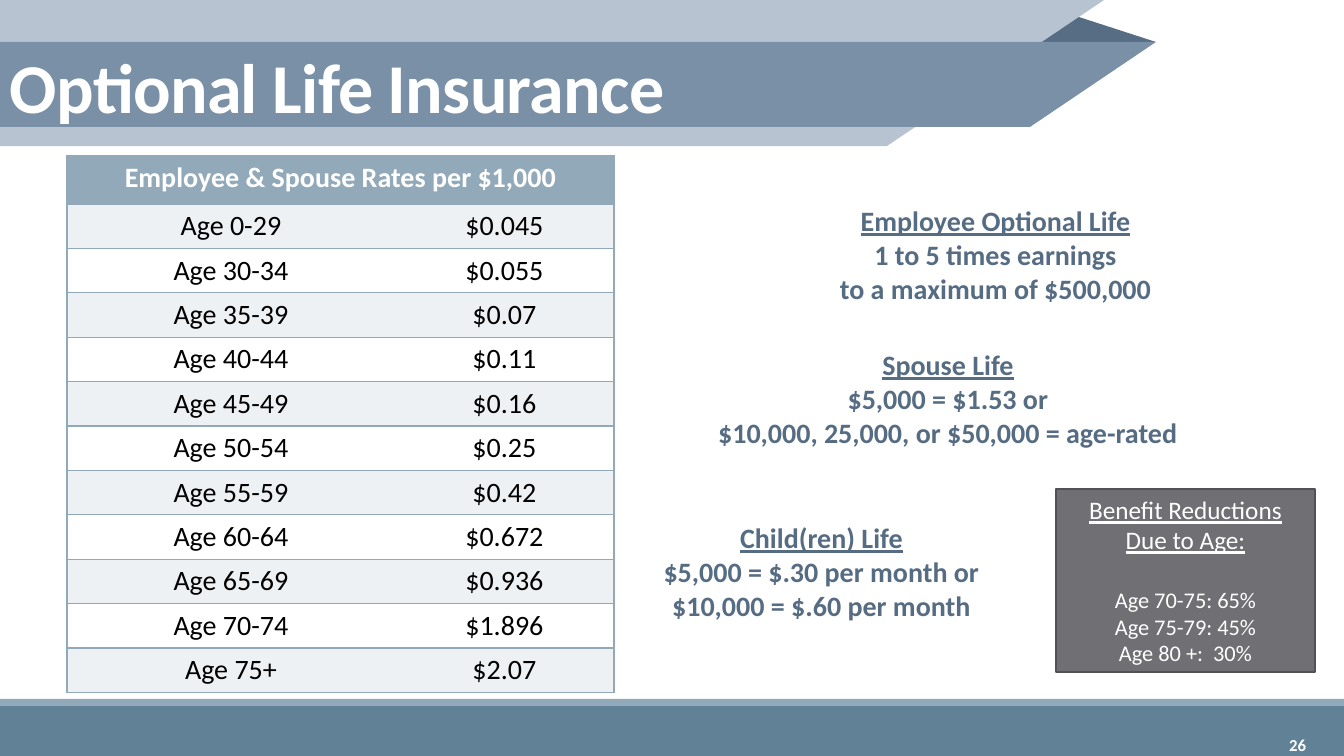
"""Build the Optional Life Insurance slide with its rate table and coverage notes."""
from lxml import etree
from pptx import Presentation
from pptx.dml.color import RGBColor
from pptx.enum.shapes import MSO_SHAPE
from pptx.enum.text import MSO_ANCHOR, PP_ALIGN
from pptx.oxml.ns import qn
from pptx.util import Pt

RECTANGLE, TRIANGLE = MSO_SHAPE.RECTANGLE, MSO_SHAPE.ISOSCELES_TRIANGLE
LEFT, CENTER, RIGHT = PP_ALIGN.LEFT, PP_ALIGN.CENTER, PP_ALIGN.RIGHT
TOP, MIDDLE = MSO_ANCHOR.TOP, MSO_ANCHOR.MIDDLE
PX = 914400 / 100.8
COLORS = {
    "white": "FFFFFF", "black": "000000", "footer": "618197", "rule": "92A9B9",
    "fold": "566D83", "pale_ribbon": "B7C3D0", "ribbon": "7990A7",
    "band": "EEF1F3", "note": "566C83", "panel": "6F6F74", "panel_edge": "525256",
}


def paint(part, color):
    part.fill.solid()
    part.fill.fore_color.rgb = RGBColor.from_string(COLORS[color])


def write(frame, lines, color, align=CENTER, bold=False, anchor=TOP):
    frame.text = "\n".join(text for text, size, underline in lines)
    frame.word_wrap = True
    frame.vertical_anchor = anchor
    for paragraph, (text, size, underline) in zip(frame.paragraphs, lines):
        paragraph.alignment = align
        font = paragraph.runs[0].font
        font.name = "Calibri"
        font.size = Pt(size)
        font.bold = bold
        font.underline = underline
        font.color.rgb = RGBColor.from_string(COLORS[color])


prs = Presentation()
prs.slide_width, prs.slide_height = round(1344 * PX), round(756 * PX)
slide = prs.slides.add_slide(prs.slide_layouts[6])
shapes = slide.shapes

for preset, color, box in [
    (RECTANGLE, "footer", (0, 706, 1344, 50)),
    (RECTANGLE, "rule", (0, 699, 1344, 7)),
    (TRIANGLE, "fold", (1029, 14, 127, 28)),
]:
    decoration = shapes.add_shape(preset, *[round(v * PX) for v in box])
    decoration.shadow.inherit = False
    paint(decoration, color)
    decoration.line.fill.background()
decoration.adjustments[0] = 0.32

for color, top, bottom, top_right, bottom_right in [
    ("pale_ribbon", 0, 146, 1104, 887),
    ("ribbon", 42, 127, 1156, 1030),
]:
    outline = shapes.build_freeform(0, top, scale=PX)
    outline.add_line_segments([(top_right, top), (bottom_right, bottom), (0, bottom)])
    ribbon = outline.convert_to_shape()
    ribbon.shadow.inherit = False
    paint(ribbon, color)
    ribbon.line.fill.background()

rates = [
    ("Employee & Spouse Rates per $1,000", ""),
    ("Age 0-29", "$0.045"), ("Age 30-34", "$0.055"), ("Age 35-39", "$0.07"),
    ("Age 40-44", "$0.11"), ("Age 45-49", "$0.16"), ("Age 50-54", "$0.25"),
    ("Age 55-59", "$0.42"), ("Age 60-64", "$0.672"), ("Age 65-69", "$0.936"),
    ("Age 70-74", "$1.896"), ("Age 75+", "$2.07"),
]
row_heights = [48] + [44] * (len(rates) - 1)
rate_table = shapes.add_table(
    len(rates), 2, *[round(v * PX) for v in (67, 156, 547, sum(row_heights))]
).table
for column, width in zip(rate_table.columns, (328, 219)):
    column.width = round(width * PX)
rate_table.cell(0, 0).merge(rate_table.cell(0, 1))
for r, rate in enumerate(rates):
    rate_table.rows[r].height = round(row_heights[r] * PX)
    for c, text in enumerate(rate):
        cell = rate_table.cell(r, c)
        inner_side = "lnL" if c else "lnR"
        cell_props = cell._tc.get_or_add_tcPr()
        for side in ("lnL", "lnR", "lnT", "lnB"):
            border = etree.SubElement(cell_props, qn(f"a:{side}"), w=str(Pt(1)))
            if side == inner_side and r:
                etree.SubElement(border, qn("a:noFill"))
            else:
                border_fill = etree.SubElement(border, qn("a:solidFill"))
                etree.SubElement(border_fill, qn("a:srgbClr"), val=COLORS["rule"])
        paint(cell, "rule" if r == 0 else "band" if r % 2 else "white")
        if text:
            write(cell.text_frame, [(text, 20, False)], "black" if r else "white", bold=r == 0)

coverages = [
    ((790, 199, 411, 112),
     ["Employee Optional Life", "1 to 5 times earnings", "to a maximum of $500,000"]),
    ((694, 343, 508, 146),
     ["Spouse Life", "$5,000 = $1.53 or", "$10,000, 25,000, or $50,000 = age-rated"]),
    ((631, 516, 381, 112),
     ["Child(ren) Life", "$5,000 = $.30 per month or", "$10,000 = $.60 per month"]),
]
for box, lines in coverages:
    coverage = shapes.add_textbox(*[round(v * PX) for v in box])
    write(coverage.text_frame, [(text, 20, i == 0) for i, text in enumerate(lines)],
          "note", bold=True)

title = shapes.add_textbox(*[round(v * PX) for v in (0, 51, 1231, 108)])
write(title.text_frame, [("Optional Life Insurance", 50, False)], "white", LEFT, True)
title_line = title.text_frame.paragraphs[0]
title_line.line_spacing = 0.85
title_line.runs[0].font._element.set("spc", "-50")

page_number = shapes.add_textbox(*[round(v * PX) for v in (1172, 725, 144, 40)])
write(page_number.text_frame, [("26", 12, False)], "white", RIGHT, True, MIDDLE)

reductions = shapes.add_shape(RECTANGLE, *[round(v * PX) for v in (1056, 489, 259, 183)])
reductions.shadow.inherit = False
paint(reductions, "panel")
reductions.line.color.rgb = RGBColor.from_string(COLORS["panel_edge"])
reductions.line.width = Pt(1.25)
write(reductions.text_frame, [
    ("Benefit Reductions Due to Age:", 18, True),
    ("Age 70-75: 65%", 16, False),
    ("Age 75-79: 45%", 16, False),
    ("Age 80 +:  30%", 16, False),
], "white", anchor=MIDDLE)
reductions.text_frame.paragraphs[1].space_before = Pt(22)

prs.save("out.pptx")
